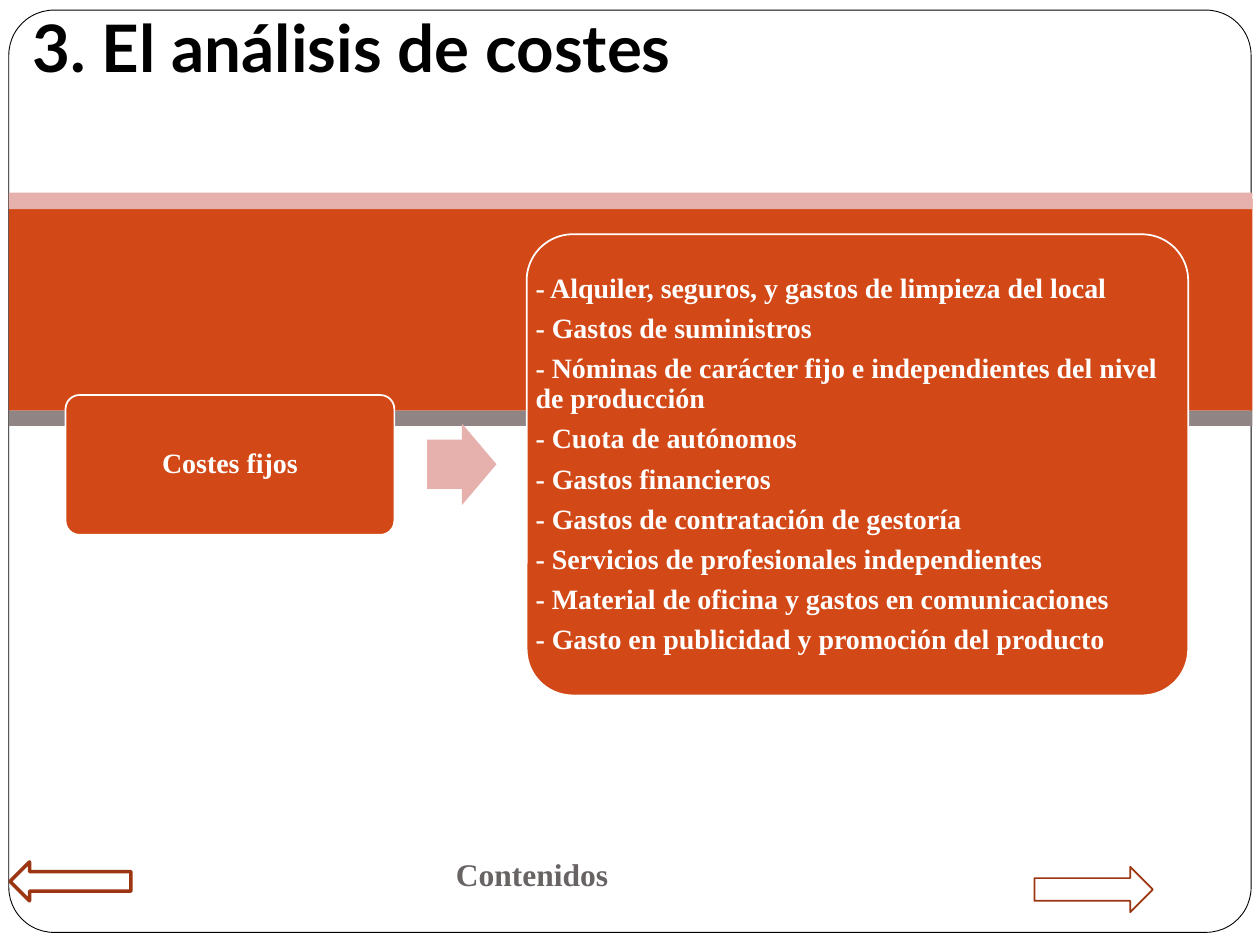
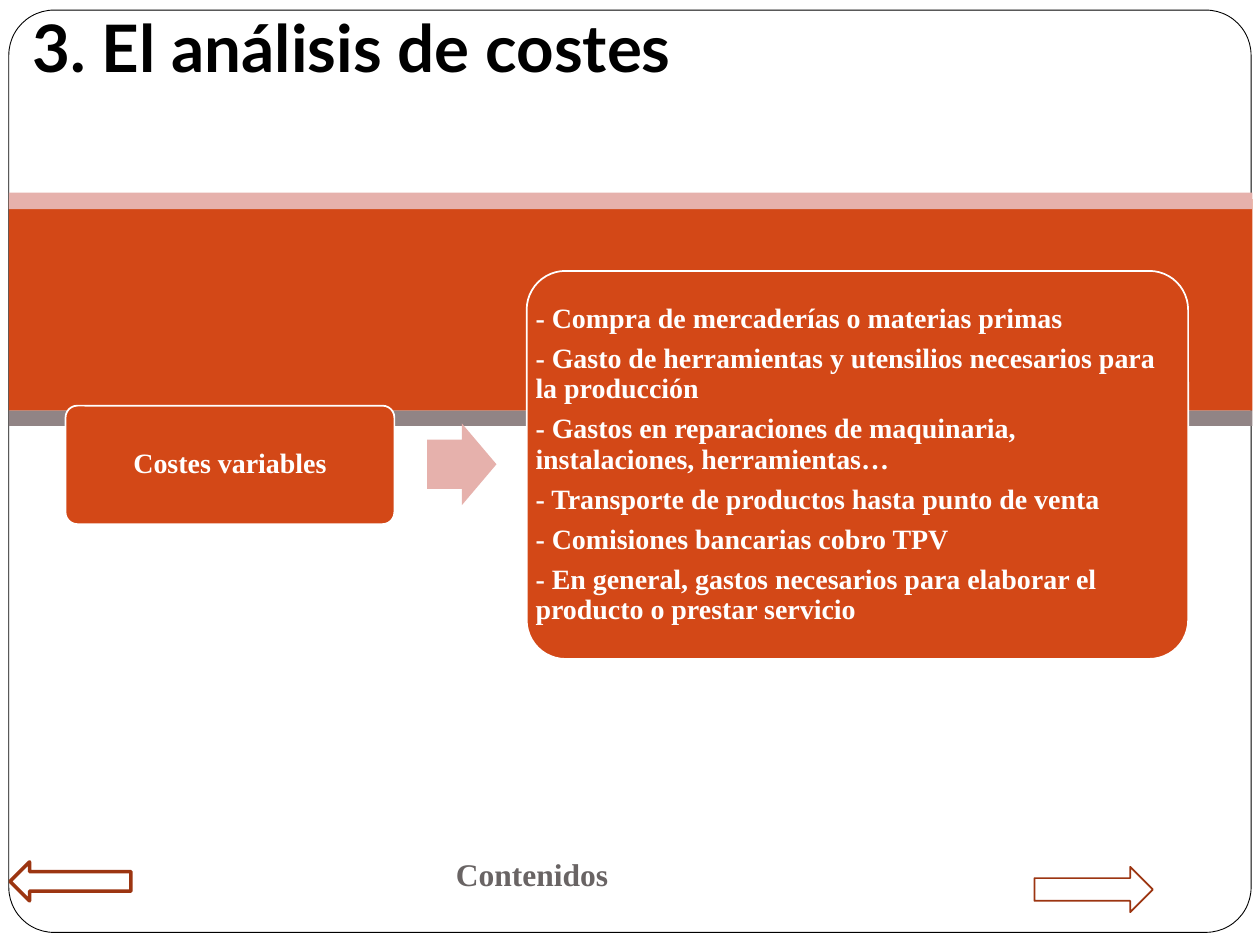
"""Builds two slides on fixed and variable costs."""
from pptx import Presentation
from pptx.dml.color import RGBColor
from pptx.enum.shapes import MSO_SHAPE
from pptx.enum.text import MSO_ANCHOR, PP_ALIGN
from pptx.util import Inches, Pt

TITLE = "3. El análisis de costes"
FOOTER = "Contenidos"
SLIDES = [
    {
        "cost": "Costes fijos", "cost_h": 1.11, "list_h": 3.66,
        "items": [
            "Alquiler, seguros, y gastos de limpieza del local",
            "Gastos de suministros",
            "Nóminas de carácter fijo e independientes del nivel de producción",
            "Cuota de autónomos",
            "Gastos financieros",
            "Gastos de contratación de gestoría",
            "Servicios de profesionales independientes",
            "Material de oficina y gastos en comunicaciones",
            "Gasto en publicidad y promoción del producto",
        ],
    },
    {
        "cost": "Costes variables", "cost_h": 0.94, "list_h": 3.08,
        "items": [
            "Compra de mercaderías o materias primas",
            "Gasto de herramientas y utensilios necesarios para la producción",
            "Gastos en reparaciones de maquinaria, instalaciones, herramientas…",
            "Transporte de productos hasta punto de venta",
            "Comisiones bancarias cobro TPV",
            "En general, gastos necesarios para elaborar el producto o prestar servicio",
        ],
    },
]

WHITE = RGBColor(0xFF, 0xFF, 0xFF)
BLACK = RGBColor(0, 0, 0)
ORANGE = RGBColor(0xD3, 0x48, 0x17)
PINK = RGBColor(0xE6, 0xB1, 0xAC)
TAUPE = RGBColor(0x91, 0x84, 0x85)
RUST = RGBColor(0x9C, 0x35, 0x11)
GREY = RGBColor(0x69, 0x64, 0x64)
BODY_FONT, TITLE_FONT = "Times New Roman", "Lato"
BANDS = [(1.58, 1.68, ORANGE), (1.53, 0.13, PINK), (3.26, 0.12, TAUPE)]
MIDDLE = 3.69


def add_shape(s, kind, x, y, w, h, fill=None, line=None, width=1, adj=()):
    sp = s.shapes.add_shape(kind, Inches(x), Inches(y), Inches(w), Inches(h))
    sp.shadow.inherit = False
    if fill is None:
        sp.fill.background()
    else:
        sp.fill.solid()
        sp.fill.fore_color.rgb = fill
    if line is None:
        sp.line.fill.background()
    else:
        sp.line.color.rgb = line
        sp.line.width = Pt(width)
    for i, value in enumerate(adj):
        sp.adjustments[i] = value


def add_text(s, x, y, w, h, *lines, size=16, font=BODY_FONT, color=WHITE, align=PP_ALIGN.LEFT,
             anchor=MSO_ANCHOR.MIDDLE, inset=None, spacing=None, after=None):
    tf = s.shapes.add_textbox(Inches(x), Inches(y), Inches(w), Inches(h)).text_frame
    tf.word_wrap = True
    tf.vertical_anchor = anchor
    if inset is not None:
        tf.margin_left = tf.margin_right = tf.margin_top = tf.margin_bottom = Inches(inset)
    for i, text in enumerate(lines):
        p = tf.add_paragraph() if i else tf.paragraphs[0]
        p.alignment = align
        p.line_spacing = spacing
        p.space_after = after
        r = p.add_run()
        r.text = text
        r.font.size, r.font.name, r.font.bold = Pt(size), font, True
        r.font.color.rgb = color


def add_card(s, x, w, h, *lines, align=PP_ALIGN.LEFT):
    y = MIDDLE - h / 2
    add_shape(s, MSO_SHAPE.ROUNDED_RECTANGLE, x, y, w, h, ORANGE, WHITE, adj=[0.1])
    add_text(s, x, y, w, h, *lines, align=align, inset=0.07, spacing=0.9, after=Pt(5.6))


def add_frame(s):
    add_shape(s, MSO_SHAPE.ROUNDED_RECTANGLE, 0.07, 0.08, 9.86, 7.32, WHITE, BLACK, 0.5, [0.049])
    for y, h, color in BANDS:
        add_shape(s, MSO_SHAPE.RECTANGLE, 0.07, y, 9.87, h, color)
    add_text(s, 0.16, 0.05, 9.42, 0.63, TITLE, size=37.4, font=TITLE_FONT, color=BLACK)
    add_text(s, 3.52, 6.74, 1.44, 0.4, FOOTER, size=18, color=GREY, anchor=MSO_ANCHOR.TOP)
    add_shape(s, MSO_SHAPE.LEFT_ARROW, 0.08, 6.84, 0.96, 0.31, line=RUST, width=2)
    add_shape(s, MSO_SHAPE.RIGHT_ARROW, 8.21, 6.88, 0.94, 0.36, line=RUST)


def main():
    prs = Presentation()
    prs.slide_width, prs.slide_height = Inches(10), Inches(7.5)
    for data in SLIDES:
        s = prs.slides.add_slide(prs.slide_layouts[6])
        add_frame(s)
        add_card(s, 0.52, 2.61, data["cost_h"], data["cost"], align=PP_ALIGN.CENTER)
        add_shape(s, MSO_SHAPE.RIGHT_ARROW, 3.39, 3.36, 0.55, 0.65, PINK, adj=[0.6, 0.5])
        add_card(s, 4.18, 5.25, data["list_h"], *(f"- {item}" for item in data["items"]))
    prs.save("out.pptx")


if __name__ == "__main__":
    main()
